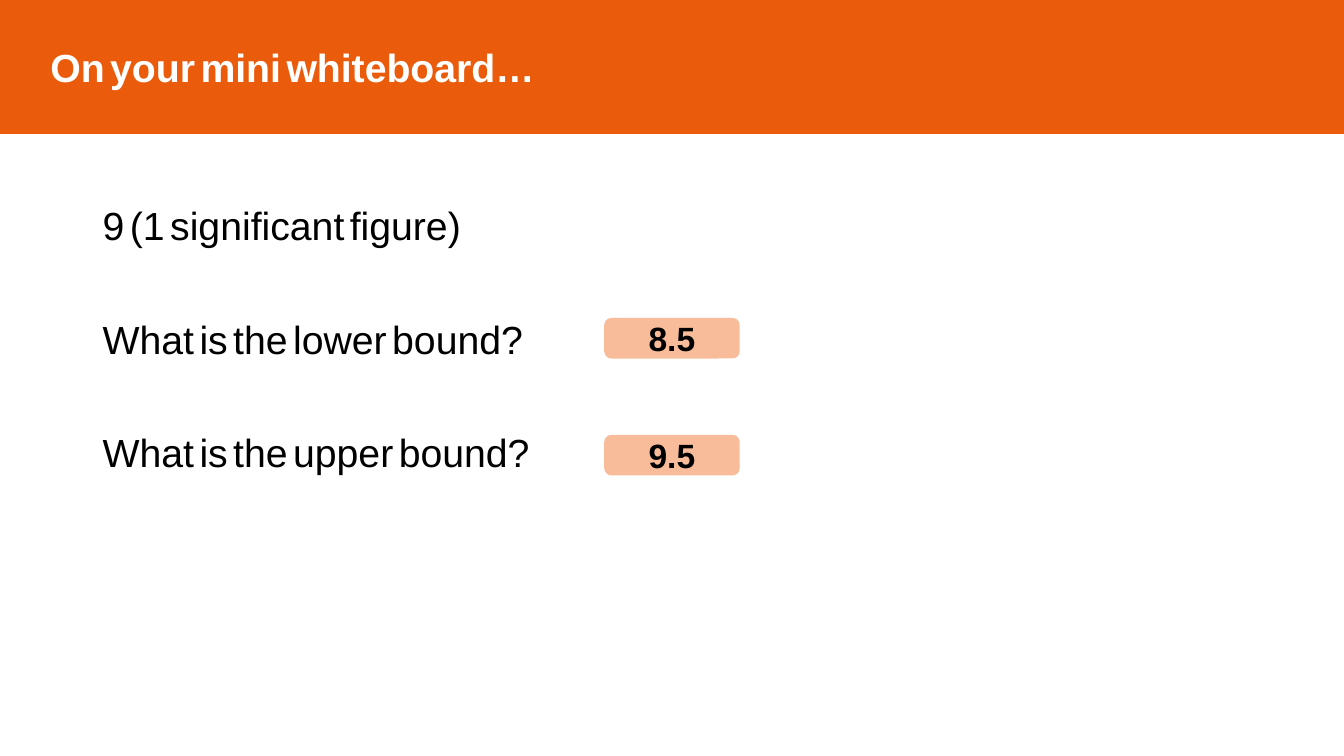
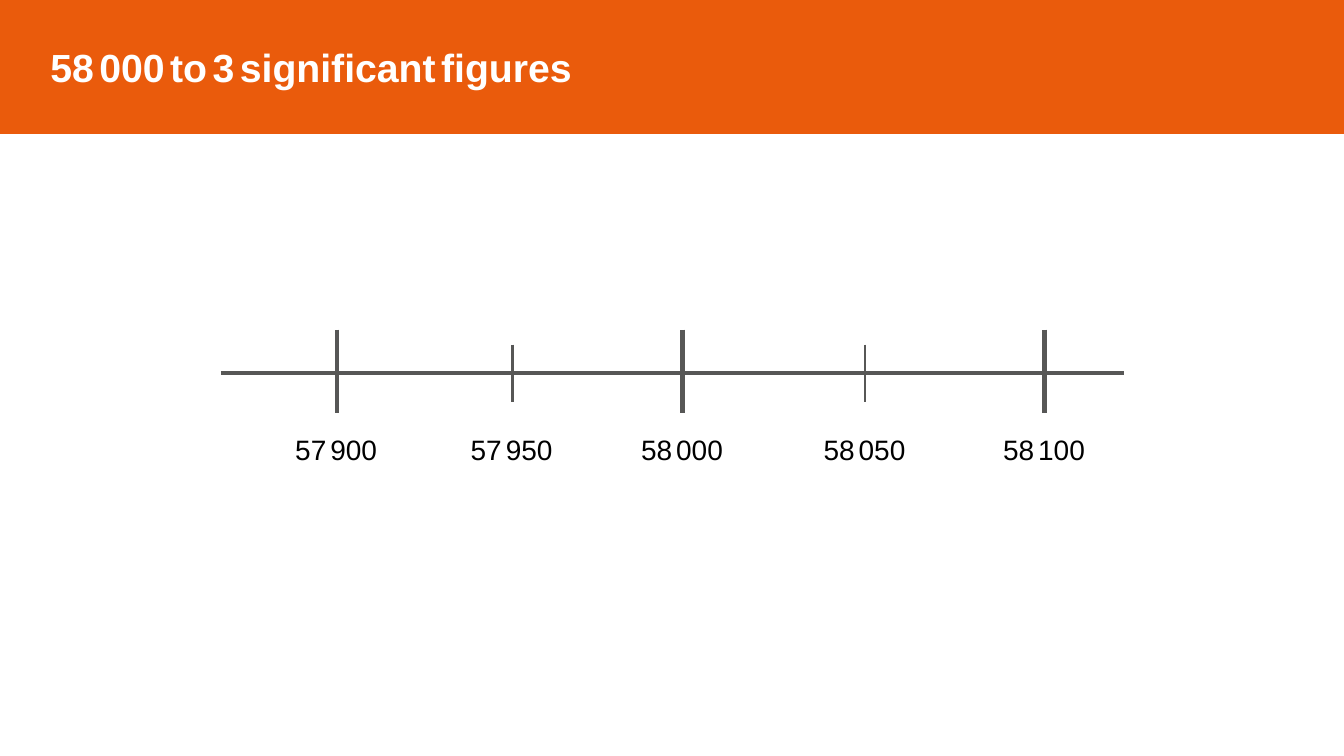
from lxml.etree import SubElement
from pptx import Presentation
from pptx.dml.color import RGBColor
from pptx.enum.shapes import MSO_CONNECTOR, MSO_SHAPE
from pptx.enum.text import MSO_ANCHOR, PP_ALIGN
from pptx.oxml.ns import qn
from pptx.util import Inches, Pt

THIN = " "


def paint(code):
    return RGBColor.from_string(code)


def write(para, text, size=28, color="000000", bold=False, align=PP_ALIGN.LEFT,
          before=0, spacing=1.0):
    para.alignment = align
    para.space_before = Pt(before)
    para.line_spacing = spacing
    for part in text.replace(THIN, f"|{THIN}|").split("|"):
        run = para.add_run()
        run.text = part
        font = run.font
        font.name = Deck.font
        font.size = Pt(size / 2 if part == THIN else size)
        font.bold = bold
        font.color.rgb = paint(color)


class Deck:
    """Hold the shared style and the slide being built."""

    font = "Arial"
    band = "EA5B0C"
    tint = "F9BC9A"
    ink = "575756"

    def __init__(self):
        self.show = Presentation()
        self.show.slide_width = Inches(13.33)
        self.show.slide_height = Inches(7.5)
        self.slide = None

    def start(self, title):
        self.slide = self.show.slides.add_slide(self.show.slide_layouts[6])
        frame = self.block(MSO_SHAPE.RECTANGLE, 0, 0, 13.33, 1.32, self.band)
        frame.margin_left = Inches(0.5)
        write(frame.paragraphs[0], title, color="FFFFFF", bold=True)

    def block(self, kind, left, top, width, height, color):
        shape = self.slide.shapes.add_shape(
            kind, Inches(left), Inches(top), Inches(width), Inches(height))
        shape.shadow.inherit = False
        shape.fill.solid()
        shape.fill.fore_color.rgb = paint(color)
        shape.line.color.rgb = paint(color)
        shape.line.width = Pt(1)
        shape.text_frame.vertical_anchor = MSO_ANCHOR.MIDDLE
        return shape.text_frame

    def answer(self, text, top):
        frame = self.block(MSO_SHAPE.ROUNDED_RECTANGLE, 6, top, 1.33, 0.39, self.tint)
        write(frame.paragraphs[0], text, size=24, bold=True, align=PP_ALIGN.CENTER)

    def text(self, lines, left, top, width, height, gap=0, **style):
        box = self.slide.shapes.add_textbox(
            Inches(left), Inches(top), Inches(width), Inches(height))
        frame = box.text_frame
        frame.word_wrap = True
        for i, line in enumerate(lines):
            para = frame.add_paragraph() if i else frame.paragraphs[0]
            write(para, line, before=gap if i else 0, **style)

    def line(self, x1, y1, x2, y2, width):
        line = self.slide.shapes.add_connector(
            MSO_CONNECTOR.STRAIGHT, Inches(x1), Inches(y1), Inches(x2), Inches(y2))
        line.line.color.rgb = paint(self.ink)
        line.line.width = Pt(width)
        SubElement(line._element.spPr, qn("a:effectLst"))

    def tick(self, x, label, major):
        top, base, width = (3.27, 4.1, 3) if major else (3.42, 3.99, 2)
        self.line(x, top, x, base, width)
        self.text([label], x - 0.51, 4.24, 1.04, 0.44, size=20)


def main():
    deck = Deck()

    deck.start("On your mini whiteboard…")
    deck.text(["9 (1 significant figure)", "What is the lower bound?",
               "What is the upper bound?"],
              0.92, 2, 11.5, 4.76, gap=51, spacing=0.9)
    deck.answer("8.5", 3.16)
    deck.answer("9.5", 4.32)

    deck.start("58 000 to 3 significant figures")
    deck.line(2.19, 3.7, 11.15, 3.7, 3)
    for i, x in enumerate([3.34, 5.08, 6.77, 8.58, 10.36]):
        label = f"{57900 + 50 * i:,}".replace(",", THIN)
        deck.tick(x, label, major=i % 2 == 0)

    deck.show.save("out.pptx")


if __name__ == "__main__":
    main()
